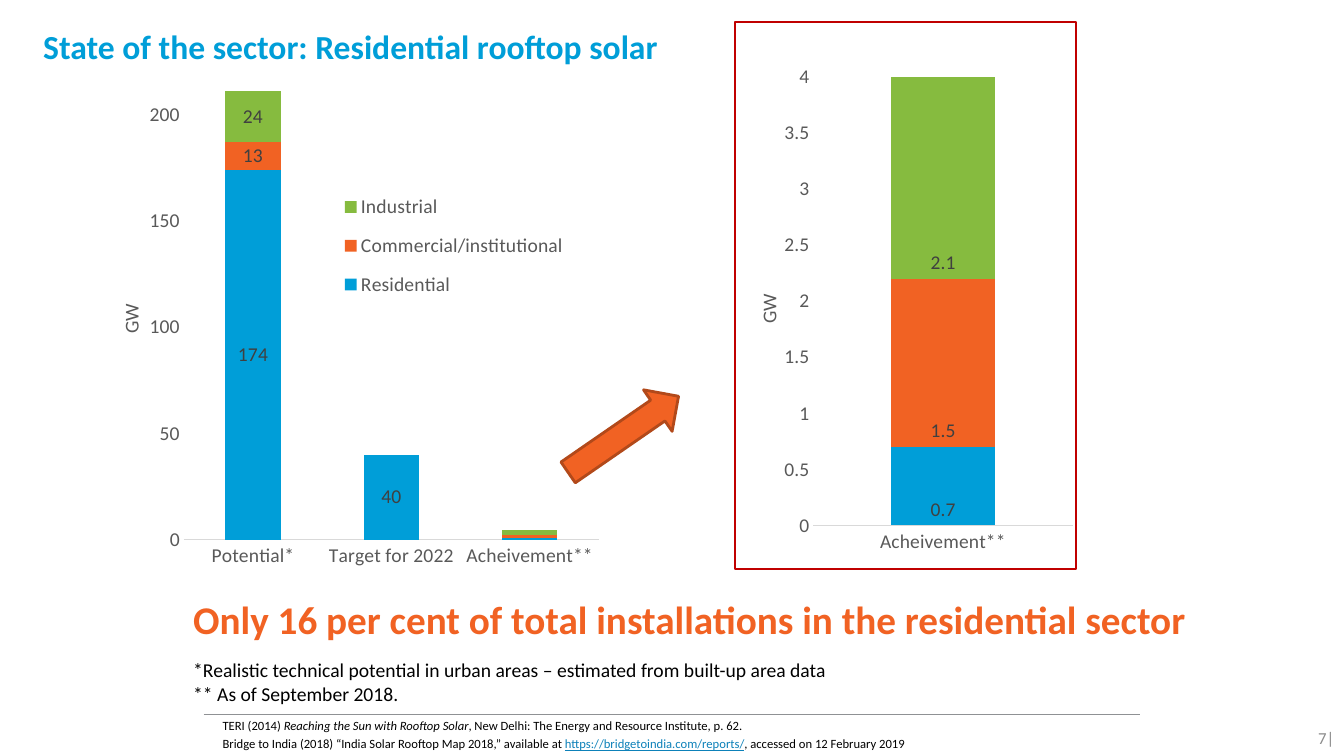
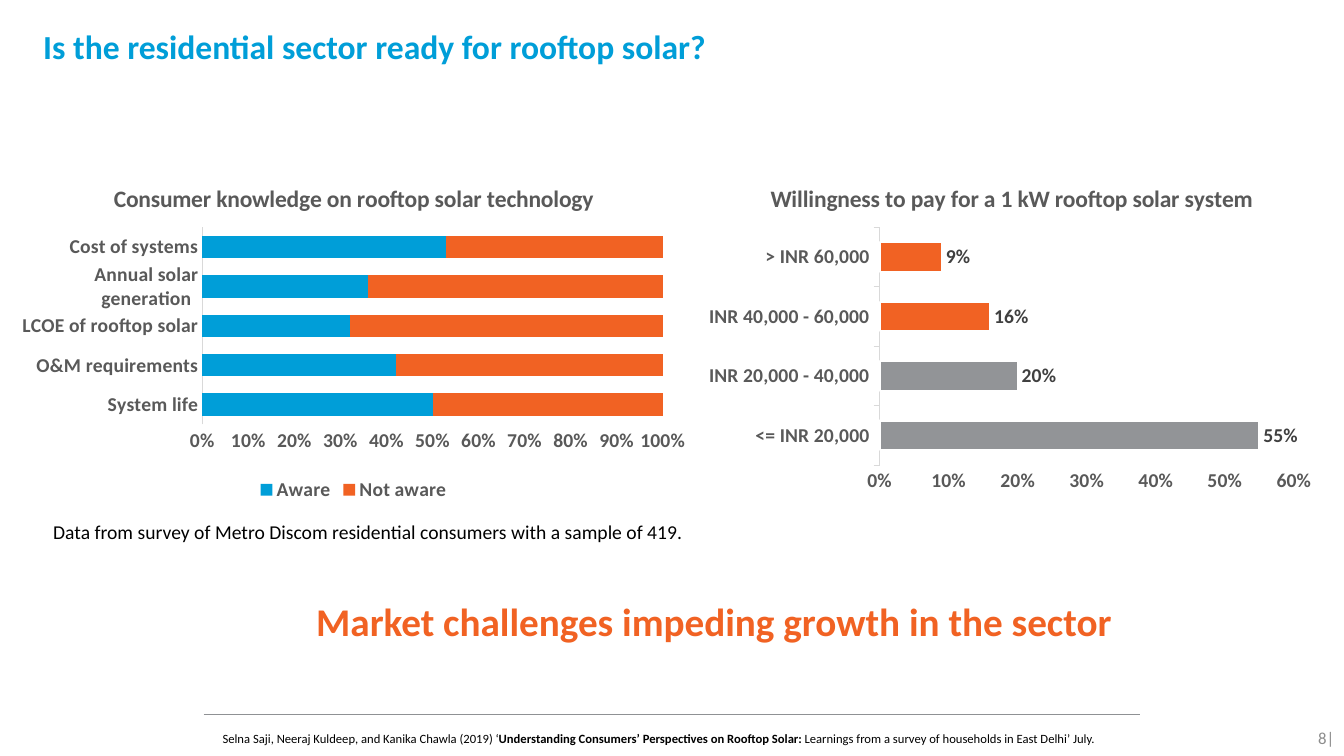
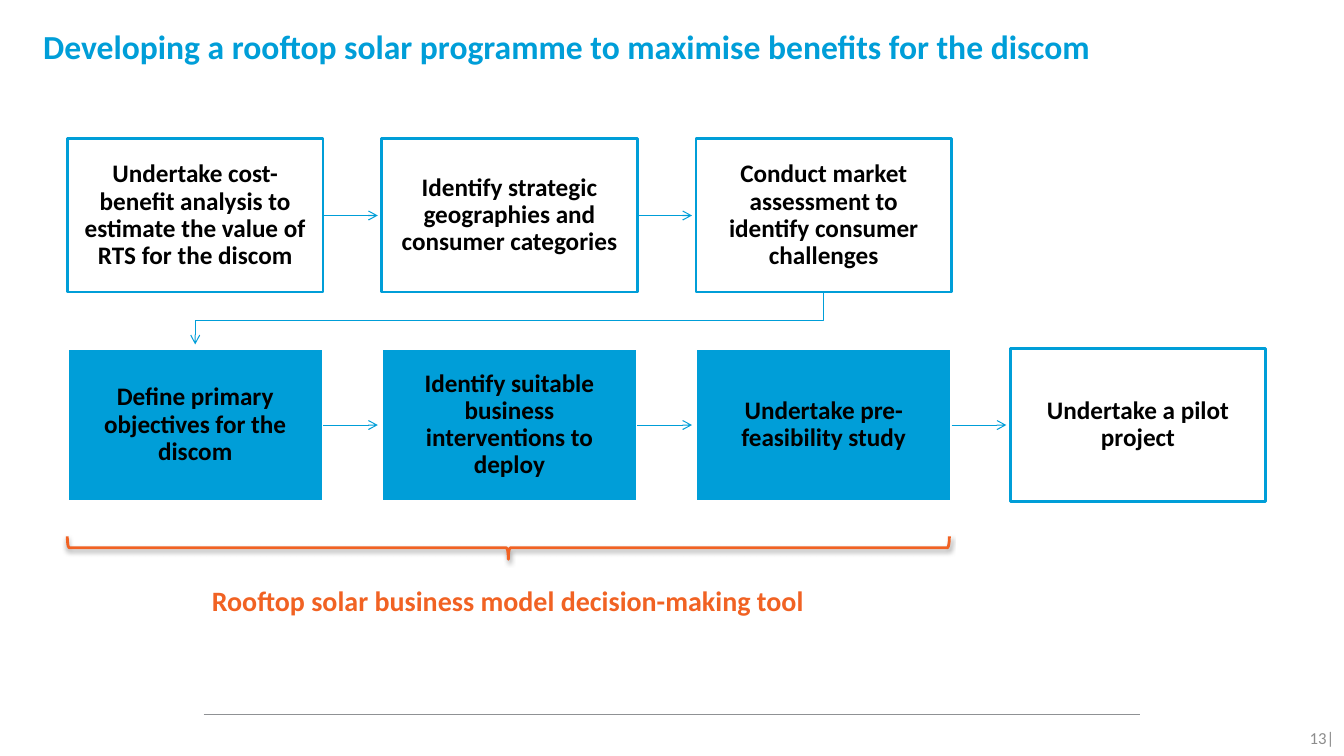
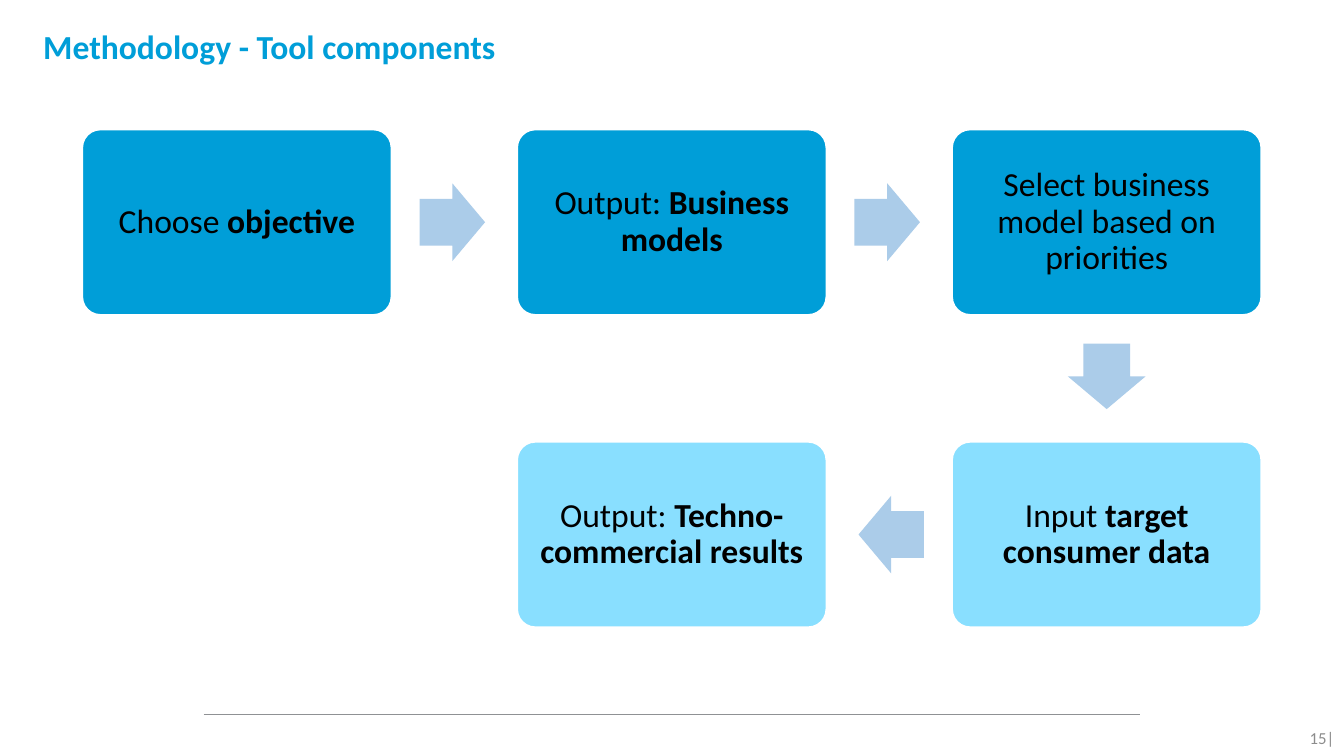
from dataclasses import dataclass
from lxml import etree
from pptx import Presentation
from pptx import util as u
from pptx.chart import data
from pptx.dml import color
from pptx.enum import chart as ch
from pptx.enum import shapes, text
from pptx.oxml import ns


@dataclass(frozen=True)
class Theme:
    font: str = "Calibri"
    blue: str = "009ED8"
    sky: str = "89DFFF"
    pale: str = "ABCCE9"
    orange: str = "F16223"
    rust: str = "B2491A"
    green: str = "86BB3F"
    red: str = "C00000"
    link: str = "0D81B9"
    black: str = "000000"
    white: str = "FFFFFF"
    dark: str = "404040"
    grey: str = "595959"
    mid: str = "929497"
    rule: str = "8F9194"
    page: str = "8C8C8C"
    axis: str = "D9D9D9"
    note: float = 9
    small: float = 12
    body: float = 14
    head: float = 16.8
    step: float = 18
    tool: float = 20
    title: float = 24
    claim: float = 28


T = Theme()
MID = text.MSO_ANCHOR.MIDDLE
CENTER = text.PP_ALIGN.CENTER
BOX = shapes.MSO_SHAPE


# Basics
def rgb(code):
    return color.RGBColor.from_string(code)


def place(box):
    return [u.Cm(n) for n in box]


def style(font, size, tint, bold=False):
    font.name, font.size, font.bold = T.font, u.Pt(size), bold
    font.color.rgb = rgb(tint)


def ink(line, tint, width):
    line.color.rgb = rgb(tint)
    line.width = u.Pt(width)


def sub(node, tag, **attrs):
    return etree.SubElement(node, ns.qn(tag), attrs)


# Text: a paragraph is a string or a list of (text, mark) runs
def write(shape, paras, size, tint, bold=False, align=None, anchor=None,
          pad=(0.25, 0.13), space=0, lead=None):
    frame = shape.text_frame
    frame.word_wrap = True
    frame.vertical_anchor = anchor or text.MSO_ANCHOR.TOP
    frame.margin_left = frame.margin_right = u.Cm(pad[0])
    frame.margin_top = frame.margin_bottom = u.Cm(pad[1])
    for i, runs in enumerate(paras):
        para = frame.paragraphs[0] if i == 0 else frame.add_paragraph()
        para.alignment = align
        para.line_spacing = lead
        if i and space:
            para.space_before = u.Pt(space)
        style(para.font, size, tint, bold)
        for words, mark in [(runs, "")] if isinstance(runs, str) else runs:
            run = para.add_run()
            run.text = words
            if mark == "b":
                run.font.bold = True
            elif mark == "i":
                run.font.italic = True
            elif mark == "link":
                run.font.underline = True
                run.font.color.rgb = rgb(T.link)


def label(slide, box, paras, size, tint, **kw):
    write(slide.shapes.add_textbox(*place(box)), paras, size, tint, **kw)


# Shapes and lines
def block(slide, kind, box, fill=None, line=None, width=2, turn=0):
    shape = slide.shapes.add_shape(kind, *place(box))
    shape.rotation = turn
    shape.shadow.inherit = False
    if fill:
        shape.fill.solid()
        shape.fill.fore_color.rgb = rgb(fill)
    else:
        shape.fill.background()
    if line:
        ink(shape.line, line, width)
    else:
        shape.line.fill.background()
    return shape


def tip(shape):
    ln = shape.element.spPr.find(ns.qn("a:ln"))
    sub(ln, "a:tailEnd", type="arrow")


def stroke(slide, ends, tint, arrow=False):
    line = slide.shapes.add_connector(shapes.MSO_CONNECTOR.STRAIGHT, *place(ends))
    ink(line.line, tint, 0.75)
    sub(line.element.spPr, "a:effectLst")
    if arrow:
        tip(line)


def bend(slide, points, tint):
    first, *rest = [place(p) for p in points]
    build = slide.shapes.build_freeform(*first)
    build.add_line_segments(rest, close=False)
    shape = build.convert_to_shape()
    shape.fill.background()
    ink(shape.line, tint, 0.75)
    shape.shadow.inherit = False
    tip(shape)


# Frame shared by all slides
def base(deck, title, page):
    slide = deck.slides.add_slide(deck.slide_layouts[6])
    stroke(slide, (5.13, 18.01, 28.73, 18.01), T.rule)
    label(slide, (31.72, 18.08, 2.16, 1.02), [f"{page}|"], T.small, T.page,
          align=text.PP_ALIGN.RIGHT, anchor=MID)
    label(slide, (1.09, 0.53, 31.34, 2.21), [title], T.title, T.blue,
          bold=True, pad=(0, 0.13))
    return slide


def claim(slide, box, words):
    label(slide, box, [words], T.claim, T.orange, bold=True)


def source(slide, top, paras):
    label(slide, (5.61, top, 22.78, 0.9), paras, T.note, T.black,
          anchor=MID, pad=(0, 0), space=2)


# Charts
def lay(node, x, y, w=None, h=None):
    for old in node.findall(ns.qn("c:layout")):
        node.remove(old)
    outer = etree.Element(ns.qn("c:layout"))
    inner = sub(outer, "c:manualLayout")
    if node.tag == ns.qn("c:plotArea"):
        sub(inner, "c:layoutTarget", val="inner")
    for key in "xy":
        sub(inner, f"c:{key}Mode", val="edge")
    for key, n in zip("xywh", (x, y, w, h)):
        if n is not None:
            sub(inner, f"c:{key}", val=str(n))
    over = node.find(ns.qn("c:overlay"))
    if over is None:
        node.insert(0, outer)
    else:
        over.addprevious(outer)


def graph(slide, box, kind, cats, rows, plot, gap, top, unit,
          fmt="General", bold=False, title=None, ticks=False):
    info = data.CategoryChartData()
    info.categories = cats
    for name, vals, _ in rows:
        info.add_series(name, vals)
    chart = slide.shapes.add_chart(kind, *place(box), info).chart
    style(chart.font, T.body, T.grey, bold)
    chart.has_legend = False
    chart.has_title = bool(title)
    if title:
        chart.chart_title.text_frame.text = title
        style(chart.chart_title.text_frame.paragraphs[0].font,
              T.head, T.grey, True)
    bars = chart.plots[0]
    bars.vary_by_categories = False
    bars.gap_width = gap
    if kind != ch.XL_CHART_TYPE.BAR_CLUSTERED:
        bars.overlap = 100
    for item, (_, _, tint) in zip(bars.series, rows):
        item.invert_if_negative = False
        item.format.fill.solid()
        item.format.fill.fore_color.rgb = rgb(tint)
    cat, val = chart.category_axis, chart.value_axis
    for axis in (cat, val):
        axis.has_major_gridlines = False
        axis.major_tick_mark = ch.XL_TICK_MARK.NONE
    if ticks:
        cat.major_tick_mark = ch.XL_TICK_MARK.OUTSIDE
    ink(cat.format.line, T.axis, 0.75)
    val.format.line.fill.background()
    val.minimum_scale, val.maximum_scale, val.major_unit = 0, top, unit
    val.tick_labels.number_format = fmt
    val.tick_labels.number_format_is_linked = False
    lay(chart.element.find(".//" + ns.qn("c:plotArea")), *plot)
    return chart


def values(chart, fmt, spot, bold=False):
    for item in chart.plots[0].series:
        tags = item.data_labels
        tags.show_value = True
        tags.number_format, tags.number_format_is_linked = fmt, False
        tags.position = spot
        style(tags.font, T.body, T.dark, bold)


def legend(chart, spot, box=None):
    chart.has_legend = True
    chart.legend.position = spot
    chart.legend.include_in_layout = False
    style(chart.legend.font, T.body, T.grey, chart.font.bold)
    if box:
        lay(chart.legend._element, *box)


def unit(chart, x, y):
    name = chart.value_axis.axis_title
    name.text_frame.text = "GW"
    style(name.text_frame.paragraphs[0].font, T.body, T.grey)
    lay(chart.value_axis.axis_title._element, x, y)


def border(chart, tint, width):
    props = etree.Element(ns.qn("c:spPr"))
    line = sub(props, "a:ln", w=str(u.Pt(width)))
    sub(sub(line, "a:solidFill"), "a:srgbClr", val=tint)
    chart.element.find(ns.qn("c:chart")).addnext(props)


# Slide: state of the sector
def sector(deck):
    slide = base(deck, "State of the sector: Residential rooftop solar", 7)
    kind = ch.XL_CHART_TYPE.COLUMN_STACKED
    names = ("Residential", "Commercial/institutional", "Industrial")
    tints = (T.blue, T.orange, T.green)
    done = (0.7, 1.5, 2.1)
    plans = ((174, 40), (13, None), (24, None))
    full = graph(slide, (2.49, 1.52, 12.62, 14.38), kind,
                 ("Potential*", "Target for 2022", "Acheivement**"),
                 [(n, (*p, d), t) for n, p, d, t in zip(names, plans, done, tints)],
                 (0.17, 0.02, 0.83, 0.82), 150, 220, 50)
    values(full, '[>=10]0;""', ch.XL_LABEL_POSITION.CENTER)
    legend(full, ch.XL_LEGEND_POSITION.RIGHT, (0.48, 0.21, 0.46, 0.23))
    unit(full, 0.03, 0.42)

    zoom = graph(slide, (18.49, 0.53, 8.66, 13.84), kind, ("Acheivement**",),
                 [(n, (d,), t) for n, d, t in zip(names, done, tints)],
                 (0.23, 0.1, 0.76, 0.82), 150, 4, 0.5)
    values(zoom, "0.0", ch.XL_LABEL_POSITION.INSIDE_BASE)
    unit(zoom, 0.05, 0.49)
    border(zoom, T.red, 1.5)

    block(slide, BOX.RIGHT_ARROW, (14.02, 10.31, 3.38, 1.27), T.orange,
          T.rust, turn=325.4)
    claim(slide, (4.62, 14.86, 28.6, 1.45),
          "Only 16 per cent of total installations in the residential sector")
    label(slide, (4.62, 16.46, 22.78, 1.45), [
        "*Realistic technical potential in urban areas – estimated from "
        "built-up area data",
        "** As of September 2018."], T.body, T.black)
    source(slide, 18.07, [
        [("TERI (2014) ", ""), ("Reaching the Sun with Rooftop Solar", "i"),
         (", New Delhi: The Energy and Resource Institute, p. 62.", "")],
        [("Bridge to India (2018) “India Solar Rooftop Map 2018,” available at ", ""),
         ("https://bridgetoindia.com/reports/", "link"),
         (", accessed on 12 February 2019", "")]])


# Slide: survey results
def survey(deck):
    slide = base(deck, "Is the residential sector ready for rooftop solar?", 8)
    pay = graph(slide, (17.58, 4.19, 15.82, 8.56), ch.XL_CHART_TYPE.BAR_CLUSTERED,
                ("<= INR 20,000", "INR 20,000 - 40,000", "INR 40,000 - 60,000",
                 "> INR 60,000"),
                [("Share", (0.55, 0.2, 0.16, 0.09), T.mid)],
                (0.29, 0.18, 0.66, 0.7), 100, 0.6, 0.1, "0%", True,
                "Willingness to pay for a 1 kW rooftop solar system", True)
    values(pay, "0%", ch.XL_LABEL_POSITION.OUTSIDE_END, True)
    share = pay.plots[0].series[0]
    ink(share.format.line, T.white, 1.5)
    for i in (2, 3):
        look = share.points[i].format
        look.fill.solid()
        look.fill.fore_color.rgb = rgb(T.orange)
        ink(look.line, T.white, 1.5)

    know = graph(slide, (0.25, 4.19, 17.32, 8.56), ch.XL_CHART_TYPE.BAR_STACKED,
                 ("System life", "O&M requirements", "LCOE of rooftop solar",
                  "Annual solar generation", "Cost of systems"),
                 [("Aware", (0.5, 0.42, 0.32, 0.36, 0.53), T.blue),
                  ("Not aware", (0.5, 0.58, 0.68, 0.64, 0.47), T.orange)],
                 (0.28, 0.18, 0.67, 0.58), 75, 1, 0.1, "0%", True,
                 "Consumer knowledge on rooftop solar technology")
    legend(know, ch.XL_LEGEND_POSITION.BOTTOM)

    label(slide, (1.09, 12.98, 26.8, 0.86),
          ["Data from survey of Metro Discom residential consumers with a "
           "sample of 419."], T.body, T.black)
    claim(slide, (7.72, 14.91, 21.26, 1.45),
          "Market challenges impeding growth in the sector")
    source(slide, 18.17, [
        [("Selna Saji, Neeraj Kuldeep, and Kanika Chawla (2019) ‘", ""),
         ("Understanding Consumers’ Perspectives on Rooftop Solar: ", "b"),
         ("Learnings from a survey of households in East Delhi’ July.", "")]])


# Slide: programme steps, in a grid from a left top corner
def steps(slide, left, top):
    wide, high, dx, dy = 6.44, 3.86, 7.92, 5.28
    rows = (
        (("Undertake cost-benefit analysis to estimate the value of RTS for "
          "the discom", False),
         ("Identify strategic geographies and consumer categories", False),
         ("Conduct market assessment to identify consumer challenges", False)),
        (("Define primary objectives for the discom", True),
         ("Identify suitable business interventions to deploy", True),
         ("Undertake pre-feasibility study", True),
         ("Undertake a pilot project", False)))
    for r, row in enumerate(rows):
        y = top + r * dy
        for c, (words, full) in enumerate(row):
            x = left + c * dx
            card = block(slide, BOX.RECTANGLE, (x, y, wide, high),
                         T.blue if full else None, T.white if full else T.blue)
            write(card, [words], T.step, T.black, bold=True, align=CENTER,
                  anchor=MID, pad=(0.36, 0.36), lead=0.9)
            if c < len(row) - 1:
                stroke(slide, (x + wide, y + high / 2, x + dx - 0.1,
                               y + high / 2), T.blue, True)
    near, far = left + wide / 2, left + 2 * dx + wide / 2
    turn = top + (high + dy) / 2
    bend(slide, ((far, top + high), (far, turn), (near, turn),
                 (near, top + dy - 0.1)), T.blue)


def programme(deck):
    slide = base(deck, "Developing a rooftop solar programme to maximise "
                 "benefits for the discom", 13)
    steps(slide, 1.7, 3.5)
    brace = block(slide, BOX.RIGHT_BRACE, (12.52, 2.69, 0.58, 22.23),
                  line=T.orange, turn=90)
    glow = sub(brace.element.spPr.find(ns.qn("a:effectLst")), "a:outerShdw",
               blurRad="40000", dist="20000", dir="5400000", rotWithShape="0")
    sub(sub(glow, "a:srgbClr", val=T.black), "a:alpha", val="38000")
    label(slide, (4.06, 14.58, 17.48, 1.12),
          ["Rooftop solar business model decision-making tool"],
          T.tool, T.orange, bold=True, align=CENTER)


# Slide: tool components, in a grid from a left top corner
def parts(slide, left, top):
    wide, high, dx, dy = 7.82, 4.7, 10.96, 7.87
    cards = (
        (0, 0, T.blue, [("Choose ", ""), ("objective", "b")]),
        (1, 0, T.blue, [("Output: ", ""), ("Business models", "b")]),
        (2, 0, T.blue, "Select business model based on priorities"),
        (2, 1, T.sky, [("Input ", ""), ("target consumer data", "b")]),
        (1, 1, T.sky, [("Output: ", ""), ("Techno-commercial results", "b")]))
    for c, r, fill, words in cards:
        card = block(slide, BOX.ROUNDED_RECTANGLE,
                     (left + c * dx, top + r * dy, wide, high), fill, T.white)
        card.adjustments[0] = 0.1
        write(card, [words], T.title, T.black, align=CENTER, anchor=MID,
              pad=(0.4, 0.4), lead=0.9)
    # Each arrow sits midway between two cards, slightly nearer the first
    long, thick, back = 1.65, 1.96, 0.05
    for (c, r, *_), (c2, r2, *_) in zip(cards, cards[1:]):
        x = left + (c + c2) / 2 * dx + wide / 2 - back * (c2 - c)
        y = top + (r + r2) / 2 * dy + high / 2 - back * (r2 - r)
        turn = {(1, 0): 0, (0, 1): 90, (-1, 0): 180}[c2 - c, r2 - r]
        arrow = block(slide, BOX.RIGHT_ARROW,
                      (x - long / 2, y - thick / 2, long, thick), T.pale,
                      turn=turn)
        arrow.adjustments[0] = 0.6


def method(deck):
    slide = base(deck, "Methodology - Tool components", 15)
    parts(slide, 2.06, 3.25)


def main():
    deck = Presentation()
    deck.slide_width, deck.slide_height = u.Cm(33.87), u.Cm(19.05)
    for make in (sector, survey, programme, method):
        make(deck)
    deck.save("out.pptx")


if __name__ == "__main__":
    main()
